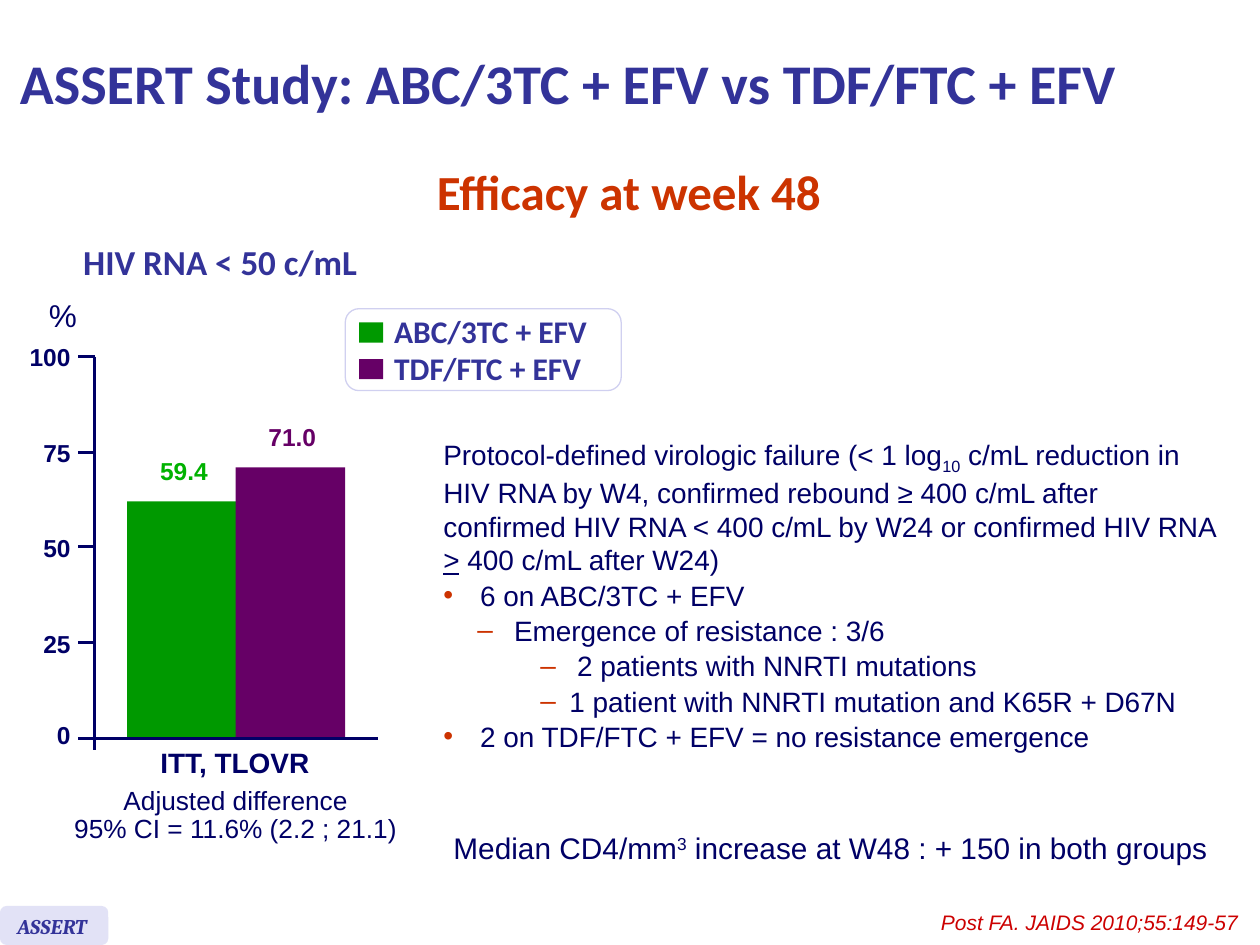
from dataclasses import dataclass

from lxml.etree import SubElement
from pptx import Presentation
from pptx.dml.color import RGBColor
from pptx.enum.shapes import MSO_CONNECTOR, MSO_SHAPE
from pptx.enum.text import MSO_ANCHOR, MSO_AUTO_SIZE, PP_ALIGN
from pptx.oxml.ns import qn
from pptx.util import Pt

PX = 9144  # EMU per px, 100 px to the inch


@dataclass(frozen=True)
class Theme:
    title: str = "333399"
    accent: str = "CC3300"
    ink: str = "000066"
    abc: str = "009900"
    abc_value: str = "00B200"
    tdf: str = "660066"
    citation: str = "CC0000"
    panel: str = "FFFFFF"
    panel_line: str = "D0D0F0"
    badge: str = "E2E2F6"
    heading_font: str = "Calibri"
    body_font: str = "Arial"
    badge_font: str = "Cambria"
    title_size: int = 32
    subtitle_size: int = 28
    chart_title_size: int = 20
    legend_size: int = 18
    summary_size: int = 17
    body_size: int = 16
    note_size: int = 15
    axis_size: int = 14
    small_size: int = 12


class SlideBuilder:
    def __init__(self, slide, theme):
        self.slide = slide
        self.theme = theme

    def box(self, left, top, width, height, fill, line=None, rounded=False):
        kind = MSO_SHAPE.ROUNDED_RECTANGLE if rounded else MSO_SHAPE.RECTANGLE
        shape = self.slide.shapes.add_shape(
            kind, left * PX, top * PX, width * PX, height * PX)
        shape.shadow.inherit = False
        shape.fill.solid()
        shape.fill.fore_color.rgb = RGBColor.from_string(fill)
        if line:
            shape.line.color.rgb = RGBColor.from_string(line)
            shape.line.width = Pt(0.75)
        else:
            shape.line.fill.background()

    def line(self, x1, y1, x2, y2):
        connector = self.slide.shapes.add_connector(
            MSO_CONNECTOR.STRAIGHT, x1 * PX, y1 * PX, x2 * PX, y2 * PX)
        connector.line.color.rgb = RGBColor.from_string(self.theme.ink)
        connector.line.width = Pt(1.5)
        SubElement(connector._element.spPr, qn("a:effectLst"))

    def text(self, left, top, width, height, paragraphs, size, color=None, font=None,
             bold=None, italic=None, align=PP_ALIGN.LEFT, anchor=MSO_ANCHOR.TOP,
             wrap=False, grow=True, inset=None, spacing=None, space_before=0):
        """Each paragraph is (bullet, margin, runs); each run is (words, rise, underline)."""
        frame = self.slide.shapes.add_textbox(
            left * PX, top * PX, width * PX, height * PX).text_frame
        frame.word_wrap = wrap
        frame.vertical_anchor = anchor
        frame.auto_size = MSO_AUTO_SIZE.SHAPE_TO_FIT_TEXT if grow else MSO_AUTO_SIZE.NONE
        if inset is not None:
            frame.margin_left = frame.margin_right = inset * PX
            frame.margin_top = frame.margin_bottom = inset * PX
        if isinstance(paragraphs, str):
            paragraphs = [plain(paragraphs)]
        for index, (bullet, margin, runs) in enumerate(paragraphs):
            paragraph = frame.add_paragraph() if index else frame.paragraphs[0]
            paragraph.alignment = align
            if spacing:
                paragraph.line_spacing = spacing
            if index and space_before:
                paragraph.space_before = Pt(space_before)
            if bullet:
                self.bullet(paragraph, bullet, margin)
            paragraph.font.name = font or self.theme.body_font
            paragraph.font.size = Pt(size)
            paragraph.font.bold = bold
            paragraph.font.italic = italic
            paragraph.font.color.rgb = RGBColor.from_string(color or self.theme.ink)
            for words, rise, underline in runs:
                run = paragraph.add_run()
                run.text = words
                if rise:
                    run._r.get_or_add_rPr().set("baseline", str(rise * 1000))
                if underline:
                    run.font.underline = True

    def bullet(self, paragraph, mark, margin):
        properties = paragraph._p.get_or_add_pPr()
        properties.set("marL", str(margin * PX))
        properties.set("indent", str(-23 * PX))
        color = SubElement(properties, qn("a:buClr"))
        SubElement(color, qn("a:srgbClr"), val=self.theme.accent)
        SubElement(properties, qn("a:buFont"), typeface=self.theme.body_font)
        SubElement(properties, qn("a:buChar"), char=mark)


def plain(words, bullet=None, margin=0):
    return bullet, margin, [(words, 0, False)]


def add_bar_chart(builder, theme):
    axis_x, axis_top, baseline = 75, 283, 586
    for value in (100, 75, 50, 25, 0):
        y = baseline - round((baseline - axis_top) * value / 100)
        label_top = y - (11 if value else 14)
        builder.text(14, label_top, 42, 23, str(value), theme.axis_size, bold=True,
                     align=PP_ALIGN.RIGHT, anchor=MSO_ANCHOR.MIDDLE, inset=0)
        if value:
            builder.line(62, y, axis_x, y)
    builder.line(axis_x, axis_top, axis_x, 595)

    bar_width = 87
    for left, top, value, fill, value_color in (
            (101, 398, "59.4", theme.abc, theme.abc_value),
            (187, 371, "71.0", theme.tdf, theme.tdf)):
        builder.box(left, top, bar_width, baseline - 1 - top, fill)
        builder.text(left + 16, top - 46, 58, 44, value, theme.axis_size, value_color,
                     bold=True, align=PP_ALIGN.CENTER, inset=10)
    builder.line(62, baseline, 300, baseline)

    builder.text(28, 230, 43, 40, "%", theme.legend_size, align=PP_ALIGN.RIGHT)
    builder.text(56, 192, 244, 38, "HIV RNA < 50 c/mL ", theme.chart_title_size,
                 theme.title, theme.heading_font, bold=True, align=PP_ALIGN.CENTER,
                 anchor=MSO_ANCHOR.MIDDLE, wrap=True, spacing=0.8)
    builder.text(116, 587, 141, 37, "ITT, TLOVR", theme.body_size, bold=True,
                 align=PP_ALIGN.CENTER)
    builder.text(47, 620, 280, 56,
                 [plain("Adjusted difference"), plain("95% CI = 11.6% (2.2 ; 21.1)")],
                 theme.note_size, align=PP_ALIGN.CENTER, spacing=0.9)


def add_legend(builder, theme):
    builder.box(274, 245, 219, 65, theme.panel, theme.panel_line, rounded=True)
    for row, (group, color) in enumerate((("ABC/3TC + EFV", theme.abc),
                                          ("TDF/FTC + EFV", theme.tdf))):
        offset = row * 29
        builder.box(285, 256 + offset, 19, 16, color)
        builder.text(303, 243 + offset, 176, 40, group, theme.legend_size,
                     theme.title, theme.heading_font, bold=True)


def add_findings(builder, theme):
    definition = (None, 0, [
        ("Protocol-defined virologic failure (< 1 log", 0, False),
        ("10", -25, False),
        (" c/mL reduction in HIV RNA by W4, confirmed rebound ≥ 400 c/mL after "
         "confirmed HIV RNA < 400 c/mL by W24 or confirmed HIV RNA ", 0, False),
        (">", 0, True),
        (" 400 c/mL after W24)", 0, False)])
    builder.text(342, 343, 642, 259, [
        definition,
        plain(" 6 on ABC/3TC + EFV", "•", 23),
        plain(" Emergence of resistance : 3/6", "–", 50),
        plain(" 2 patients with NNRTI mutations", "–", 100),
        plain("1 patient with NNRTI mutation and K65R + D67N", "–", 100),
        plain(" 2 on TDF/FTC + EFV = no resistance emergence", "•", 23),
    ], theme.body_size, anchor=MSO_ANCHOR.MIDDLE, wrap=True, space_before=1)
    cd4_increase = (None, 0, [("Median CD4/mm", 0, False), ("3", 30, False),
                              (" increase at W48 : + 150 in both groups", 0, False)])
    builder.text(350, 653, 642, 39, [cd4_increase], theme.summary_size,
                 anchor=MSO_ANCHOR.MIDDLE, wrap=True)


def main():
    theme = Theme()
    deck = Presentation()
    deck.slide_width, deck.slide_height = 1000 * PX, 750 * PX
    builder = SlideBuilder(deck.slides.add_slide(deck.slide_layouts[6]), theme)

    builder.text(6, 5, 955, 121, "ASSERT Study: ABC/3TC + EFV vs TDF/FTC + EFV",
                 theme.title_size, theme.title, theme.heading_font, bold=True,
                 anchor=MSO_ANCHOR.MIDDLE, wrap=True, grow=False)
    builder.text(335, 123, 328, 57, "Efficacy at week 48", theme.subtitle_size,
                 theme.accent, theme.heading_font, bold=True, align=PP_ALIGN.CENTER)
    add_bar_chart(builder, theme)
    add_legend(builder, theme)
    add_findings(builder, theme)
    builder.text(737, 717, 263, 30, "Post FA. JAIDS 2010;55:149-57", theme.small_size,
                 theme.citation, italic=True)
    builder.box(0, 719, 86, 31, theme.badge, rounded=True)
    builder.text(4, 720, 79, 30, "ASSERT", theme.small_size, theme.title,
                 theme.badge_font, bold=True, italic=True, wrap=True)
    deck.save("out.pptx")


if __name__ == "__main__":
    main()
